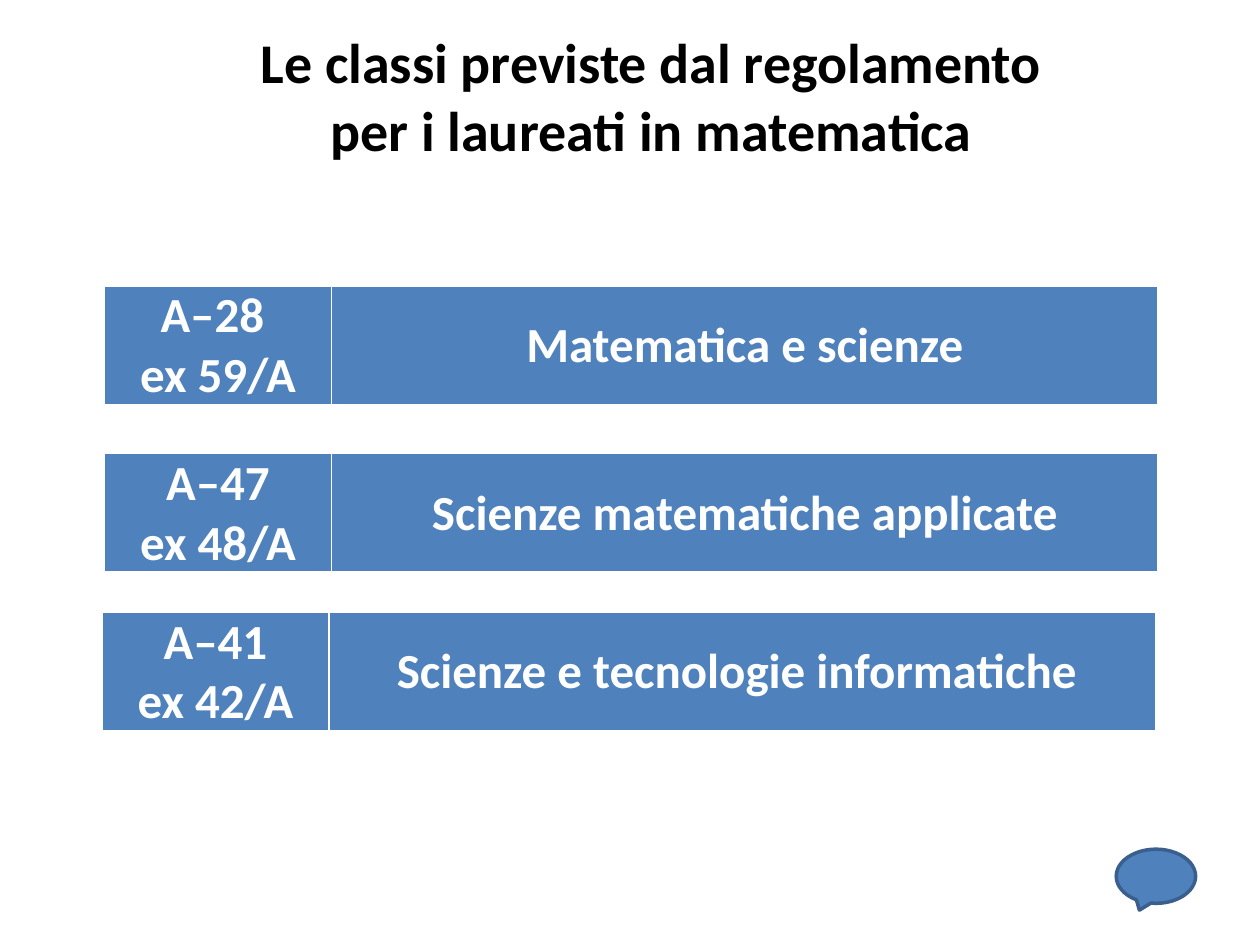
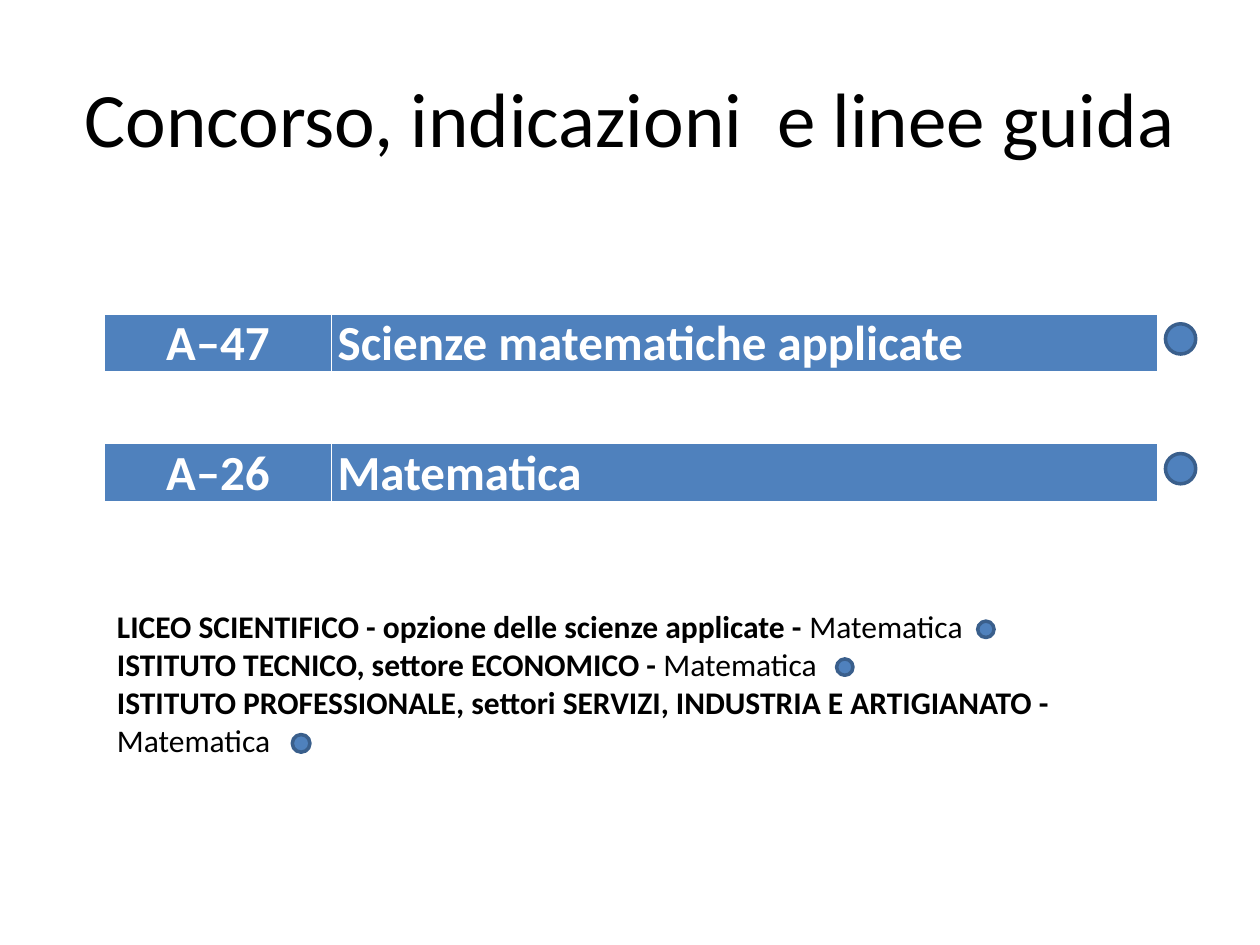
from dataclasses import dataclass

from lxml.etree import SubElement
from pptx import Presentation
from pptx.dml.color import RGBColor
from pptx.enum.shapes import MSO_SHAPE
from pptx.enum.text import MSO_ANCHOR, MSO_AUTO_SIZE, PP_ALIGN
from pptx.oxml.ns import qn
from pptx.util import Inches, Pt


@dataclass(frozen=True)
class Theme:
    font: str = "Calibri"
    blue: str = "4F81BD"
    outline: str = "3A5F8C"
    white: str = "FFFFFF"
    black: str = "000000"
    title_size: int = 44
    small_title_size: int = 32
    table_size: int = 28
    body_size: int = 18


THEME = Theme()

# Content: positions are in inches
DEGREE_CLASSES = {
    "title": "Le classi previste dal regolamento\vper i laureati in matematica",
    "rows": [
        (0.83, 2.27, "A–28 \nex 59/A", "Matematica e scienze"),
        (0.83, 3.6, "A–47\nex 48/A", "Scienze matematiche applicate"),
        (0.81, 4.86, "A–41\nex 42/A", "Scienze e tecnologie informatiche "),
    ],
}
COMPETITION = {
    "title": "Concorso, indicazioni  e linee guida",
    "rows": [
        (0.83, 2.49, "A–47", "Scienze matematiche applicate"),
        (0.83, 3.52, "A–26", "Matematica"),
    ],
    "schools": [
        "LICEO SCIENTIFICO - opzione delle scienze applicate - ",
        "ISTITUTO TECNICO, settore ECONOMICO - ",
        "ISTITUTO PROFESSIONALE, settori SERVIZI, INDUSTRIA E ARTIGIANATO - ",
    ],
    "subject": "Matematica",
    # left, top, diameter
    "school_dots": [(7.76, 4.93, 0.13), (6.64, 5.23, 0.13), (2.32, 5.83, 0.14)],
}
COLUMN_WIDTHS = (1.8, 6.56)
LINE_HEIGHT = 0.465
BORDERS = {"a:lnL": 1, "a:lnR": 1, "a:lnT": 1, "a:lnB": 3}


# Shared helpers
def format_run(run, size, color, bold=False):
    run.font.name = THEME.font
    run.font.size = Pt(size)
    run.font.bold = bold
    run.font.color.rgb = RGBColor.from_string(color)


def add_titled_slide(presentation, title, left, top, size, bold=False):
    slide = presentation.slides.add_slide(presentation.slide_layouts[5])
    shape = slide.shapes.title
    shape.left, shape.top = Inches(left), Inches(top)
    shape.width, shape.height = Inches(9), Inches(1.25)
    text_frame = shape.text_frame
    text_frame.text = title
    text_frame.auto_size = MSO_AUTO_SIZE.NONE
    text_frame.vertical_anchor = MSO_ANCHOR.MIDDLE
    paragraph = text_frame.paragraphs[0]
    paragraph.alignment = PP_ALIGN.CENTER
    for run in paragraph.runs:
        format_run(run, size, THEME.black, bold)
    return slide


def set_borders(cell):
    properties = cell._tc.get_or_add_tcPr()
    for position, (tag, width) in enumerate(BORDERS.items()):
        line = SubElement(properties, qn(tag), w=str(Pt(width)))
        fill = SubElement(line, qn("a:solidFill"))
        SubElement(fill, qn("a:srgbClr"), val=THEME.white)
        properties.insert(position, line)


def fill_cell(cell, text, alignment):
    cell.text_frame.text = text
    cell.vertical_anchor = MSO_ANCHOR.MIDDLE
    cell.margin_left = cell.margin_right = Inches(0.05)
    cell.margin_top = cell.margin_bottom = 0
    cell.fill.solid()
    cell.fill.fore_color.rgb = RGBColor.from_string(THEME.blue)
    set_borders(cell)
    for paragraph in cell.text_frame.paragraphs:
        paragraph.alignment = alignment
        for run in paragraph.runs:
            format_run(run, THEME.table_size, THEME.white, bold=True)


def add_class_table(slide, row, name_alignment):
    left, top, code, name = row
    height = LINE_HEIGHT * len(code.split("\n"))
    table = slide.shapes.add_table(
        1, 2, Inches(left), Inches(top), Inches(sum(COLUMN_WIDTHS)), Inches(height)
    ).table
    for column, width in zip(table.columns, COLUMN_WIDTHS):
        column.width = Inches(width)
    fill_cell(table.cell(0, 0), code, PP_ALIGN.CENTER)
    fill_cell(table.cell(0, 1), name, name_alignment)


def add_marker(slide, kind, left, top, width, height):
    shape = slide.shapes.add_shape(
        kind, Inches(left), Inches(top), Inches(width), Inches(height)
    )
    shape.shadow.inherit = False
    shape.fill.solid()
    shape.fill.fore_color.rgb = RGBColor.from_string(THEME.blue)
    shape.line.color.rgb = RGBColor.from_string(THEME.outline)
    shape.line.width = Pt(2)


def add_dot(slide, left, top, diameter):
    add_marker(slide, MSO_SHAPE.FLOWCHART_CONNECTOR, left, top, diameter, diameter)


# Slides
def build_degree_classes(presentation):
    slide = add_titled_slide(
        presentation, DEGREE_CLASSES["title"], 0.67, 0.13, THEME.small_title_size, True
    )
    for row in DEGREE_CLASSES["rows"]:
        add_class_table(slide, row, PP_ALIGN.CENTER)
    add_marker(slide, MSO_SHAPE.OVAL_CALLOUT, 8.86, 6.74, 0.63, 0.43)


def build_competition(presentation):
    slide = add_titled_slide(
        presentation, COMPETITION["title"], 0.5, 0.3, THEME.title_size
    )
    for row in COMPETITION["rows"]:
        add_class_table(slide, row, PP_ALIGN.LEFT)
        add_dot(slide, 9.25, row[1] + 0.08, 0.24)

    # Schools, each followed by its subject
    text_frame = slide.shapes.add_textbox(
        Inches(0.83), Inches(4.77), Inches(8.35), Inches(1.31)
    ).text_frame
    text_frame.word_wrap = True
    text_frame.text = "\n".join(COMPETITION["schools"])
    for paragraph in text_frame.paragraphs:
        format_run(paragraph.runs[0], THEME.body_size, THEME.black, bold=True)
        subject = paragraph.add_run()
        subject.text = COMPETITION["subject"]
        format_run(subject, THEME.body_size, THEME.black)
    for dot in COMPETITION["school_dots"]:
        add_dot(slide, *dot)


def main():
    presentation = Presentation()
    presentation.slide_width, presentation.slide_height = Inches(10), Inches(7.5)
    build_degree_classes(presentation)
    build_competition(presentation)
    presentation.save("out.pptx")


if __name__ == "__main__":
    main()
